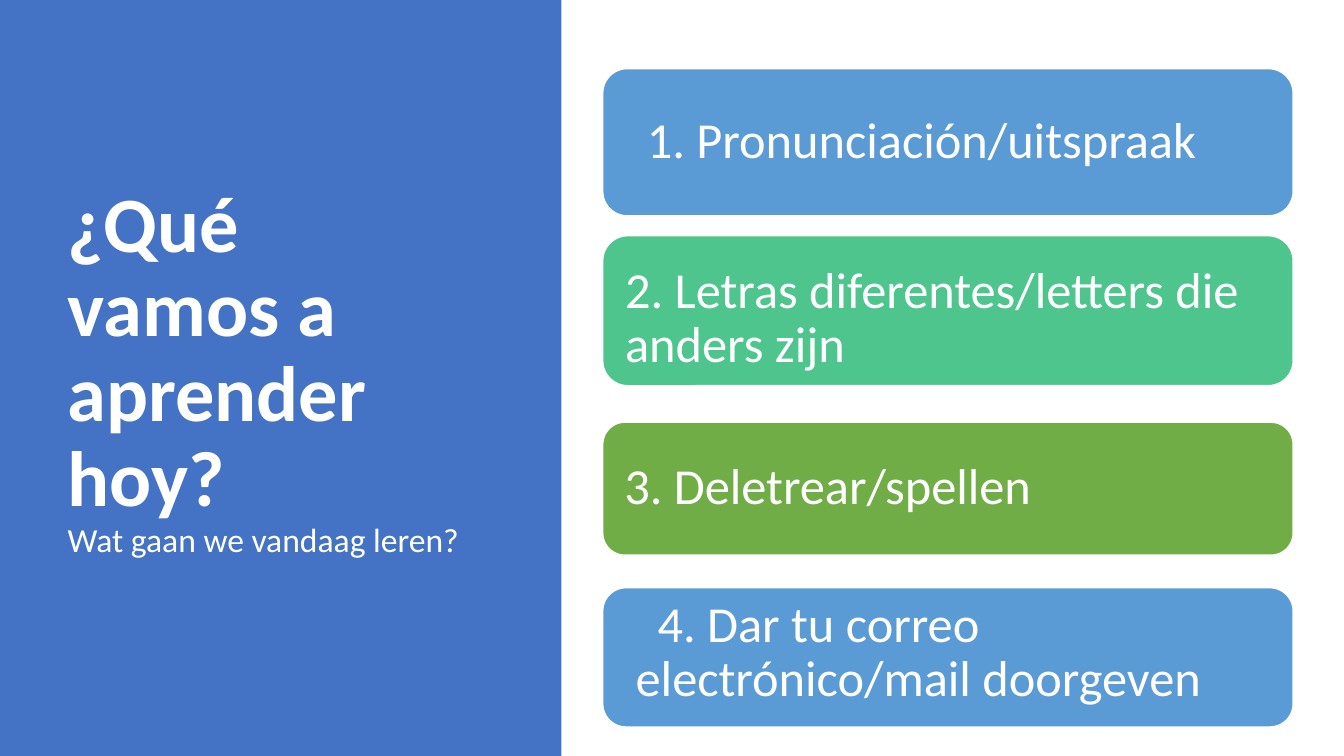
from dataclasses import dataclass

from pptx import Presentation
from pptx.dml.color import RGBColor
from pptx.enum.shapes import MSO_SHAPE
from pptx.enum.text import MSO_ANCHOR, MSO_AUTO_SIZE, PP_ALIGN
from pptx.util import Cm, Pt


@dataclass(frozen=True)
class Theme:
    """Colours, font and type sizes of the deck."""
    panel: str = "4472C4"
    blue: str = "5B9BD5"
    mint: str = "4DC58D"
    green: str = "70AD47"
    white: str = "FFFFFF"
    font: str = "Calibri"
    title: int = 56
    subtitle: int = 24
    card: int = 36


THEME = Theme()

CARDS = [
    dict(text="1. Pronunciación/uitspraak", color=THEME.blue,
         top=1.73, height=3.71, left_inset=0.33, indent=0.6),
    dict(text="2. Letras diferentes/letters die anders zijn", color=THEME.mint,
         top=5.94, height=3.78, top_inset=0.8),
    dict(text="3. Deletrear/spellen", color=THEME.green, top=10.64, height=3.35),
    dict(text="4. Dar tu correo electrónico/mail doorgeven", color=THEME.blue,
         top=14.81, height=3.51, left_inset=0.66, indent=0.55, bottom_inset=0.6),
]


def add_text(p, text, size, bold=False, color=THEME.white):
    """Append a formatted run to a paragraph."""
    r = p.add_run()
    r.text = text
    r.font.name = THEME.font
    r.font.size = Pt(size)
    r.font.bold = bold
    r.font.color.rgb = RGBColor.from_string(color)


def add_box(s, kind, left, top, width, height, color):
    """Add a filled shape without shadow or outline."""
    sp = s.shapes.add_shape(kind, Cm(left), Cm(top), Cm(width), Cm(height))
    sp.shadow.inherit = False
    sp.fill.solid()
    sp.fill.fore_color.rgb = RGBColor.from_string(color)
    sp.line.fill.background()
    return sp


def format_frame(tf):
    """Wrap, centre vertically and left-align a frame; return its paragraph."""
    tf.word_wrap = True
    tf.auto_size = MSO_AUTO_SIZE.NONE
    tf.vertical_anchor = MSO_ANCHOR.MIDDLE
    p = tf.paragraphs[0]
    p.alignment = PP_ALIGN.LEFT
    p.line_spacing = 0.9
    return p


def add_title_panel(s, left, top, width, height):
    """Draw the coloured panel with the bilingual title on it."""
    panel = add_box(s, MSO_SHAPE.RECTANGLE, left, top, width, height, THEME.panel)
    title = s.shapes.title
    title.element.addprevious(panel.element)
    title.left, title.top = Cm(left + 1.45), Cm(top + 1.73)
    title.width, title.height = Cm(width - 3.58), Cm(height - 3.76)
    p = format_frame(title.text_frame)
    add_text(p, "¿Qué vamos a aprender hoy?", THEME.title, bold=True)
    p.add_line_break()
    add_text(p, "Wat gaan we vandaag leren?", THEME.subtitle)


def add_card(s, left, top, width, height, text, color, left_inset=0.38,
             top_inset=0.38, bottom_inset=0.38, indent=0):
    """Draw one rounded topic card with its text."""
    sp = add_box(s, MSO_SHAPE.ROUNDED_RECTANGLE, left, top, width, height, color)
    sp.line.color.rgb = RGBColor.from_string(THEME.white)
    sp.line.width = Pt(1)
    tf = sp.text_frame
    tf.margin_left, tf.margin_right = Cm(left_inset), Cm(0.33)
    tf.margin_top, tf.margin_bottom = Cm(top_inset), Cm(bottom_inset)
    p = format_frame(tf)
    p._p.get_or_add_pPr().set("indent", str(Cm(indent)))
    add_text(p, text, THEME.card)


def add_agenda(s, left, width):
    """Place all topic cards in one column."""
    for card in CARDS:
        add_card(s, left=left, width=width, **card)


def main():
    """Build and save the presentation."""
    prs = Presentation()
    prs.slide_width, prs.slide_height = Cm(33.87), Cm(19.05)
    s = prs.slides.add_slide(prs.slide_layouts[5])
    add_title_panel(s, 0, 0, 14.15, 19.05)
    add_agenda(s, 15.19, 17.4)
    prs.save("out.pptx")


if __name__ == "__main__":
    main()
